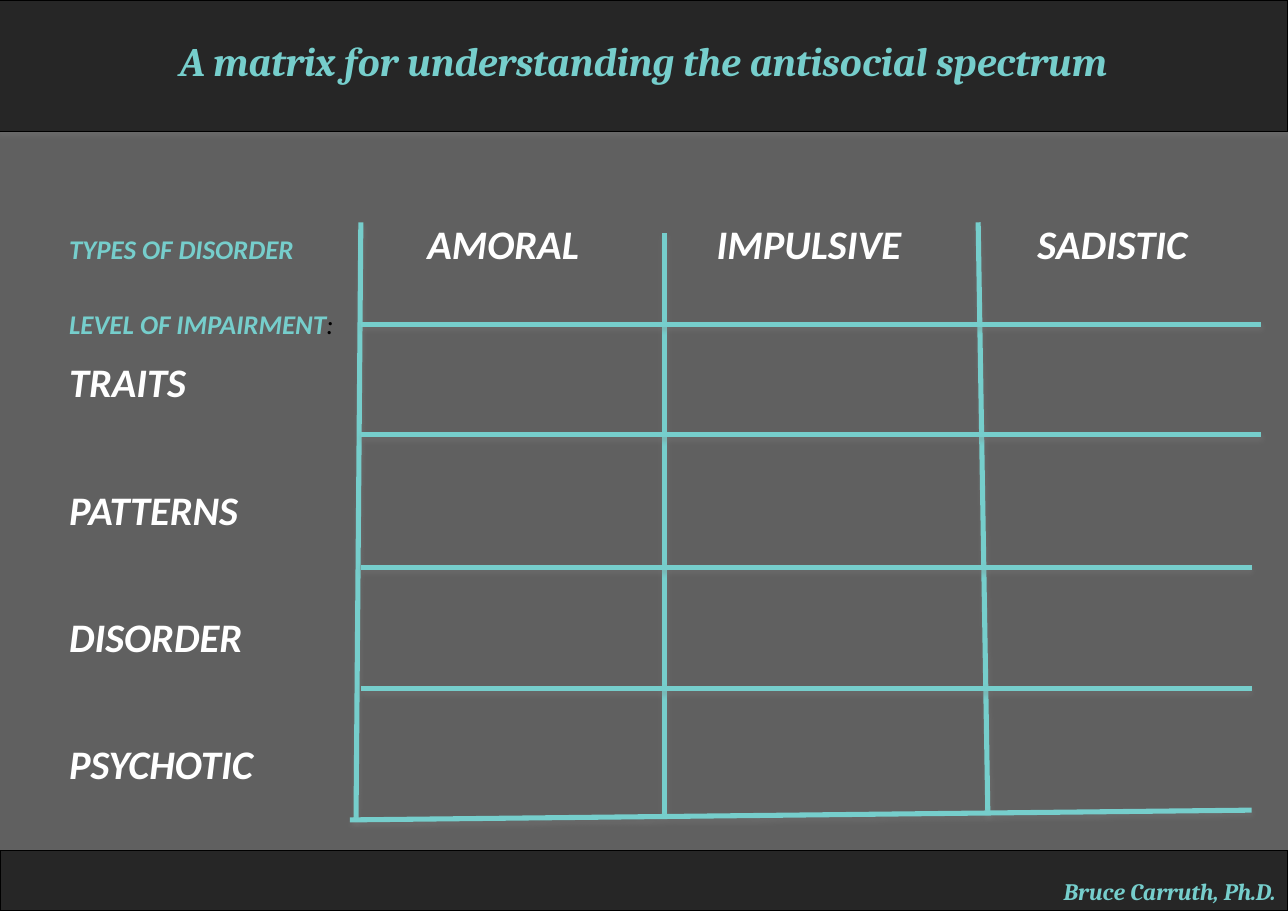
import pptx
import pptx.util
import pptx.dml.color
import pptx.enum.shapes
import pptx.enum.text
import pptx.oxml
import pptx.oxml.ns
import lxml.etree

Inches = pptx.util.Inches
Pt = pptx.util.Pt
RGBColor = pptx.dml.color.RGBColor
ALIGN = pptx.enum.text.PP_ALIGN
ANCHOR = pptx.enum.text.MSO_ANCHOR
qn = pptx.oxml.ns.qn

TEAL = RGBColor(0x76, 0xCE, 0xCC)
WHITE = RGBColor(0xFF, 0xFF, 0xFF)
BLACK = RGBColor(0x00, 0x00, 0x00)
CHARCOAL = RGBColor(0x26, 0x26, 0x26)
GRAY = RGBColor(0x60, 0x60, 0x60)

DISORDER_TYPES = ["AMORAL", "IMPULSIVE", "SADISTIC"]
TYPE_TABS = [2.95, 5.33, 7.97]
IMPAIRMENT_LEVELS = ["TRAITS", "PATTERNS", "DISORDER", "PSYCHOTIC"]
COLUMN_LINES = [
    (2.97, 1.83, 2.93, 6.75),
    (5.47, 1.92, 5.47, 6.71),
    (8.05, 1.83, 8.13, 6.71),
]
ROW_LINES = [(2.97, y, right, y) for y, right in
             [(2.67, 10.38), (3.58, 10.38), (4.67, 10.3), (5.67, 10.3)]]
BOTTOM_LINE = (2.88, 6.75, 10.3, 6.67)


def add_shadow(shape, opacity, distance):
    properties = shape.element.spPr
    for effects in properties.findall(qn("a:effectLst")):
        properties.remove(effects)
    effects = lxml.etree.SubElement(properties, qn("a:effectLst"))
    shadow = lxml.etree.SubElement(
        effects, qn("a:outerShdw"), blurRad=str(Pt(3.1)),
        dist=str(Pt(distance)), dir="5400000", rotWithShape="0")
    color = lxml.etree.SubElement(shadow, qn("a:srgbClr"), val="808080")
    lxml.etree.SubElement(color, qn("a:alpha"), val=str(opacity * 1000))


def add_bar(slide, left, top, width, height):
    bar = slide.shapes.add_shape(
        pptx.enum.shapes.MSO_SHAPE.RECTANGLE,
        Inches(left), Inches(top), Inches(width), Inches(height))
    bar.fill.solid()
    bar.fill.fore_color.rgb = CHARCOAL
    bar.line.color.rgb = BLACK
    bar.line.width = Pt(0.75)
    add_shadow(bar, 35, 1.8)
    return bar


def add_grid_line(slide, start_x, start_y, end_x, end_y):
    line = slide.shapes.add_connector(
        pptx.enum.shapes.MSO_CONNECTOR.STRAIGHT,
        Inches(start_x), Inches(start_y), Inches(end_x), Inches(end_y))
    line.line.color.rgb = TEAL
    line.line.width = Pt(3)
    add_shadow(line, 38, 1.6)


def add_text(paragraph, text, size=24, color=WHITE, font="Calibri", bold=True):
    run = paragraph.add_run()
    run.text = text
    run.font.name = font
    run.font.size = Pt(size)
    run.font.bold = bold
    run.font.italic = True
    run.font.color.rgb = color


def set_tabs(paragraph, positions):
    properties = paragraph._p.get_or_add_pPr()
    tabs = lxml.etree.SubElement(properties, qn("a:tabLst"))
    for position in positions:
        lxml.etree.SubElement(tabs, qn("a:tab"), pos=str(Inches(position)), algn="l")


def add_title(slide):
    title = slide.shapes.title
    title.left, title.top = Inches(0.13), Inches(0.25)
    title.width, title.height = Inches(10.33), Inches(0.75)
    frame = title.text_frame
    frame.auto_size = pptx.enum.text.MSO_AUTO_SIZE.NONE
    frame.vertical_anchor = ANCHOR.TOP
    paragraph = frame.paragraphs[0]
    paragraph.alignment = ALIGN.CENTER
    paragraph.line_spacing = 1.0
    paragraph.space_before = Pt(0)
    add_text(paragraph, "A matrix for understanding the antisocial spectrum",
             color=TEAL, font="Cambria")
    title.element.getparent().append(title.element)


def add_footer(slide):
    frame = add_bar(slide, 0, 7, 10.6, 0.5).text_frame
    frame.vertical_anchor = ANCHOR.BOTTOM
    paragraph = frame.paragraphs[0]
    paragraph.alignment = ALIGN.RIGHT
    add_text(paragraph, "Bruce Carruth, Ph.D.", size=14, color=TEAL, font="Cambria")


def add_matrix_labels(slide):
    box = slide.shapes.add_textbox(Inches(0.47), Inches(1.75), Inches(9.83), Inches(5.33))
    frame = box.text_frame
    frame.word_wrap = True

    types = frame.paragraphs[0]
    set_tabs(types, TYPE_TABS)
    add_text(types, "TYPES OF DISORDER", size=16, color=TEAL)
    for name in DISORDER_TYPES:
        add_text(types, "\t" + name)

    heading = frame.add_paragraph()
    heading.space_before = Pt(24)
    add_text(heading, "LEVEL OF IMPAIRMENT", size=16, color=TEAL)
    add_text(heading, ":", size=16, color=BLACK, bold=False)

    for index, level in enumerate(IMPAIRMENT_LEVELS):
        paragraph = frame.add_paragraph()
        paragraph.line_spacing = Pt(33)
        paragraph.space_before = Pt(42.5 if index else 6)
        add_text(paragraph, level)


def main():
    presentation = pptx.Presentation()
    presentation.slide_width = Inches(10.6)
    presentation.slide_height = Inches(7.5)
    slide = presentation.slides.add_slide(presentation.slide_layouts[5])
    slide.background.fill.solid()
    slide.background.fill.fore_color.rgb = GRAY

    add_footer(slide)
    add_bar(slide, -0.03, 0, 10.63, 1.08)
    add_title(slide)
    add_matrix_labels(slide)
    for ends in COLUMN_LINES + ROW_LINES + [BOTTOM_LINE]:
        add_grid_line(slide, *ends)
    presentation.save("out.pptx")


if __name__ == "__main__":
    main()
